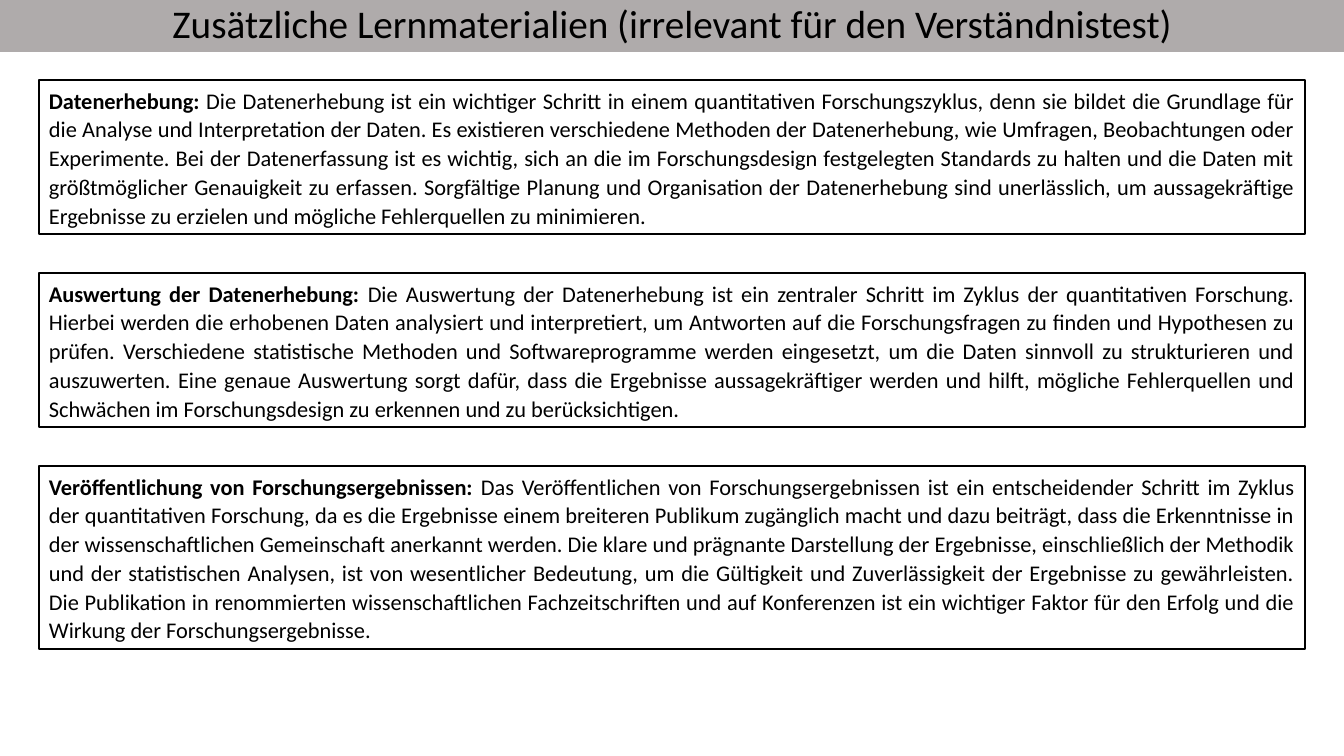
"""Build a slide of three bordered text panels under a grey title bar."""
from dataclasses import dataclass

from pptx import Presentation
from pptx import util as u
from pptx.dml.color import RGBColor
from pptx.enum import shapes, text

TITLE = "Zusätzliche Lernmaterialien (irrelevant für den Verständnistest)"
PANELS = [
    ("Datenerhebung: ",
     "Die Datenerhebung ist ein wichtiger Schritt in einem quantitativen Forschungszyklus, "
     "denn sie bildet die Grundlage für die Analyse und Interpretation der Daten. "
     "Es existieren verschiedene Methoden der Datenerhebung, wie Umfragen, Beobachtungen "
     "oder Experimente. Bei der Datenerfassung ist es wichtig, sich an die im "
     "Forschungsdesign festgelegten Standards zu halten und die Daten mit größtmöglicher "
     "Genauigkeit zu erfassen. Sorgfältige Planung und Organisation der Datenerhebung sind "
     "unerlässlich, um aussagekräftige Ergebnisse zu erzielen und mögliche Fehlerquellen "
     "zu minimieren.", 154),
    ("Auswertung der Datenerhebung: ",
     "Die Auswertung der Datenerhebung ist ein zentraler Schritt im Zyklus der "
     "quantitativen Forschung. Hierbei werden die erhobenen Daten analysiert und "
     "interpretiert, um Antworten auf die Forschungsfragen zu finden und Hypothesen zu "
     "prüfen. Verschiedene statistische Methoden und Softwareprogramme werden eingesetzt, "
     "um die Daten sinnvoll zu strukturieren und auszuwerten. Eine genaue Auswertung sorgt "
     "dafür, dass die Ergebnisse aussagekräftiger werden und hilft, mögliche Fehlerquellen "
     "und Schwächen im Forschungsdesign zu erkennen und zu berücksichtigen.", 154),
    ("Veröffentlichung von Forschungsergebnissen: ",
     "Das Veröffentlichen von Forschungsergebnissen ist ein entscheidender Schritt im "
     "Zyklus der quantitativen Forschung, da es die Ergebnisse einem breiteren Publikum "
     "zugänglich macht und dazu beiträgt, dass die Erkenntnisse in der wissenschaftlichen "
     "Gemeinschaft anerkannt werden. Die klare und prägnante Darstellung der Ergebnisse, "
     "einschließlich der Methodik und der statistischen Analysen, ist von wesentlicher "
     "Bedeutung, um die Gültigkeit und Zuverlässigkeit der Ergebnisse zu gewährleisten. "
     "Die Publikation in renommierten wissenschaftlichen Fachzeitschriften und auf "
     "Konferenzen ist ein wichtiger Faktor für den Erfolg und die Wirkung der "
     "Forschungsergebnisse.", 183),
]


@dataclass(frozen=True)
class Theme:
    """Hold the colours, font and type sizes."""
    ink: str = "000000"
    bar: str = "AFABAB"
    font: str = "Calibri"
    head: int = 28
    body: int = 16


THEME = Theme()
WIDE, HIGH = 1344, 756
BAR = 52
LEFT, TOP, GAP = 39, 80, 39


def px(n):
    """Turn pixels into EMU."""
    return u.Emu(round(n * 914400 / 100.8))


def box(slide, x, y, w, h, fill=None, line=None):
    """Add a plain rectangle."""
    rect = slide.shapes.add_shape(shapes.MSO_SHAPE.RECTANGLE, px(x), px(y), px(w), px(h))
    rect.shadow.inherit = False
    if fill:
        rect.fill.solid()
        rect.fill.fore_color.rgb = RGBColor.from_string(fill)
    else:
        rect.fill.background()
    if line:
        rect.line.color.rgb = RGBColor.from_string(line)
        rect.line.width = u.Pt(1)
    else:
        rect.line.fill.background()
    return rect


def write(rect, runs, size, align, lead, after=0, anchor=text.MSO_ANCHOR.MIDDLE, grow=False):
    """Fill a shape with one paragraph of (words, bold) runs."""
    frame = rect.text_frame
    frame.word_wrap = True
    frame.vertical_anchor = anchor
    if grow:
        frame.auto_size = text.MSO_AUTO_SIZE.SHAPE_TO_FIT_TEXT
    para = frame.paragraphs[0]
    para.alignment = align
    para.line_spacing = lead
    para.space_after = u.Pt(after)
    for words, bold in runs:
        run = para.add_run()
        run.text = words
        run.font.name = THEME.font
        run.font.size = u.Pt(size)
        run.font.bold = bold
        run.font.color.rgb = RGBColor.from_string(THEME.ink)


def main():
    """Build and save the deck."""
    deck = Presentation()
    deck.slide_width, deck.slide_height = px(WIDE), px(HIGH)
    slide = deck.slides.add_slide(deck.slide_layouts[6])
    write(box(slide, 0, 0, WIDE, BAR, fill=THEME.bar), [(TITLE, False)], THEME.head,
          text.PP_ALIGN.CENTER, 0.9, anchor=text.MSO_ANCHOR.BOTTOM)
    y = TOP
    for head, body, high in PANELS:
        rect = box(slide, LEFT, y, WIDE - 2 * LEFT, high, line=THEME.ink)
        write(rect, [(head, True), (body, False)], THEME.body, text.PP_ALIGN.JUSTIFY,
              1.07, after=8, anchor=text.MSO_ANCHOR.TOP, grow=True)
        y += high + GAP
    deck.save("out.pptx")


if __name__ == "__main__":
    main()
